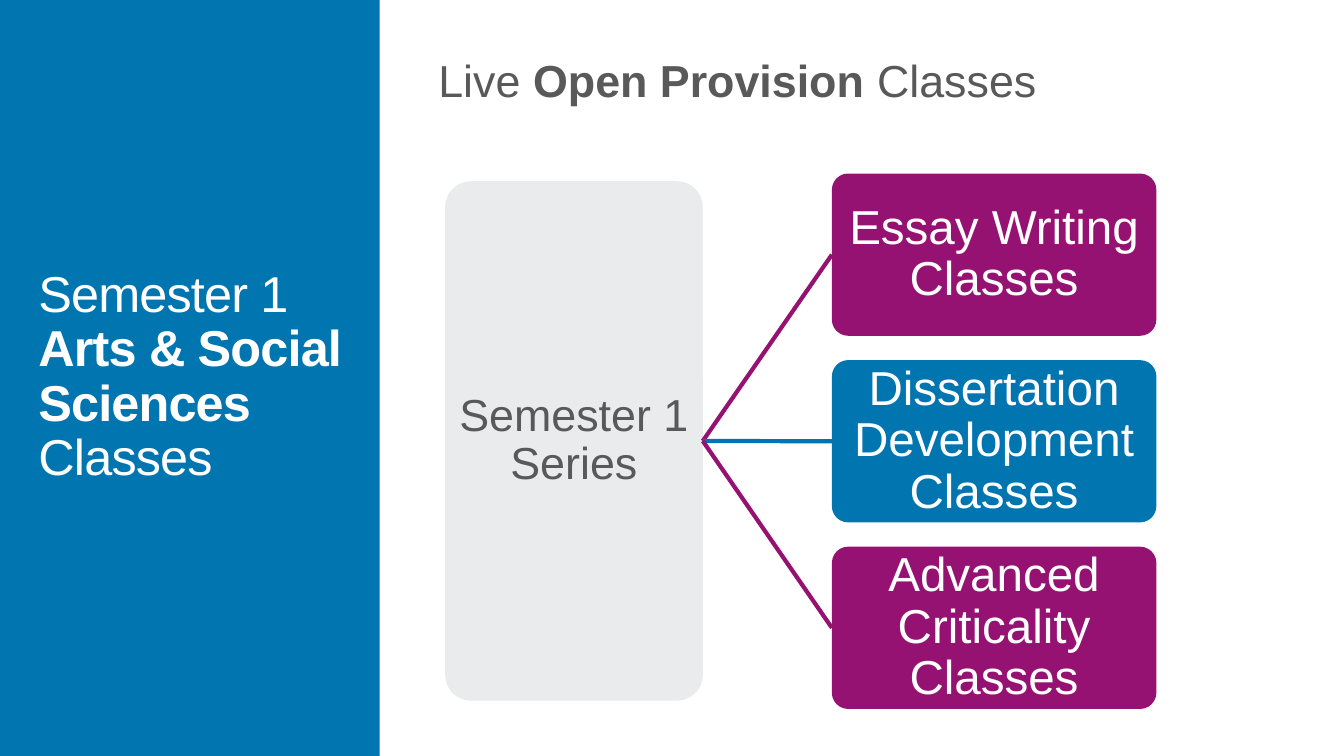
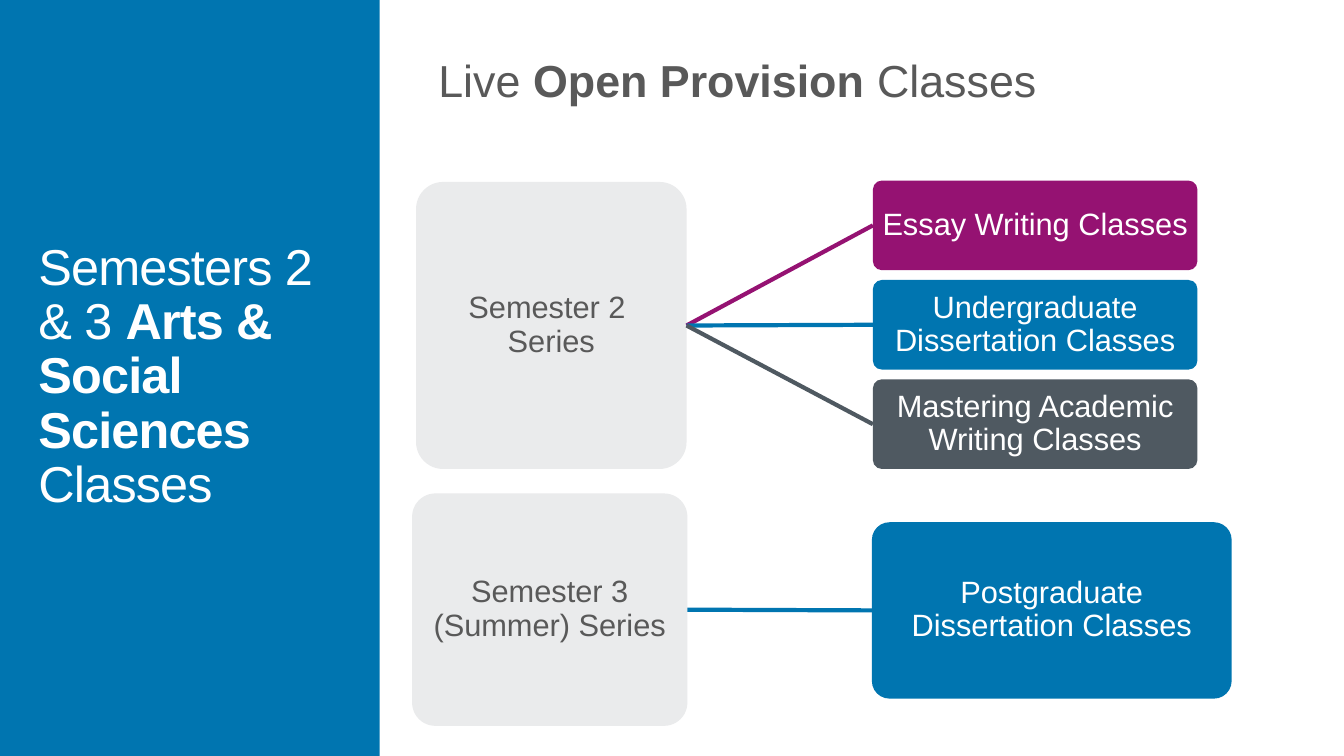
import pptx
import pptx.dml.color
import pptx.enum.shapes
import pptx.enum.text
import pptx.oxml.ns
import pptx.util
from lxml import etree

Pt = pptx.util.Pt
SHAPES = pptx.enum.shapes.MSO_SHAPE
ALIGN = pptx.enum.text.PP_ALIGN
ANCHOR = pptx.enum.text.MSO_ANCHOR

FONT = "Arial"
BLUE, PURPLE, SLATE = "0075B0", "951272", "4F5961"
PALE, GREY, WHITE = "EAEBEC", "595959", "FFFFFF"
SLIDE_WIDTH, SLIDE_HEIGHT = 960, 540
BAND_BOX = (0, 0, 271.2, SLIDE_HEIGHT)
TITLE_BOX = (20.2, 88.6, 231.8, 362.2)
HEADING_BOX = (306, 34, 622, 46)
HEADING = [("Live ", False), ("Open Provision ", True), ("Classes", False)]
SUBJECT = [("Arts & Social Sciences ", True), ("Classes", False)]


def points(box):
    """Turn a box of plain numbers into point lengths."""
    return [Pt(length) for length in box]


def paint(colour_format, colour):
    """Apply a hex colour to a fill, line or font colour."""
    colour_format.rgb = pptx.dml.color.RGBColor.from_string(colour)


def style_run(run, size, colour, bold=False):
    """Set the font of one run."""
    run.font.name, run.font.size, run.font.bold = FONT, Pt(size), bold
    paint(run.font.color, colour)


def write_parts(paragraph, parts, size, colour):
    """Write regular and bold parts, breaking the line where a part ends in one."""
    for words, bold in parts:
        run = paragraph.add_run()
        run.text = words.rstrip("\n")
        style_run(run, size, colour, bold)
        if words.endswith("\n"):
            paragraph.add_line_break()


def add_block(slide, preset, box, colour):
    """Add a flat shape with a plain fill."""
    block = slide.shapes.add_shape(preset, *points(box))
    block.shadow.inherit = False
    block.fill.solid()
    paint(block.fill.fore_color, colour)
    block.line.fill.background()
    return block


def add_card(slide, box, words, size, fill, ink):
    """Add a rounded card with centred text."""
    card = add_block(slide, SHAPES.ROUNDED_RECTANGLE, box, fill)
    card.adjustments[0] = 0.1
    frame = card.text_frame
    frame.word_wrap = True
    frame.vertical_anchor = ANCHOR.MIDDLE
    frame.margin_left = frame.margin_right = Pt(1.5)
    frame.margin_top = frame.margin_bottom = Pt(1.5)
    paragraph = frame.paragraphs[0]
    paragraph.text = words
    paragraph.alignment = ALIGN.CENTER
    paragraph.line_spacing = 0.9
    for run in paragraph.runs:
        style_run(run, size, ink)
    return card


def add_branch(slide, series, course, colour):
    """Join a series card to a course card."""
    branch = slide.shapes.add_connector(
        pptx.enum.shapes.MSO_CONNECTOR.STRAIGHT, 0, 0, 0, 0)
    branch.begin_connect(series, 3)
    branch.end_connect(course, 1)
    paint(branch.line.color, colour)
    branch.line.width = Pt(3)
    etree.SubElement(branch.element.spPr, pptx.oxml.ns.qn("a:effectLst"))


def add_series(slide, series_box, name, name_size, column, gap, courses, size):
    """Place a series card and share the column evenly among its courses."""
    series = add_card(slide, series_box, name, name_size, PALE, GREY)
    left, top, width, height = column
    course_height = (height - gap * (len(courses) - 1)) / len(courses)
    for index, (words, colour) in enumerate(courses):
        box = (left, top + index * (course_height + gap), width, course_height)
        course = add_card(slide, box, words, size, colour, WHITE)
        add_branch(slide, series, course, colour)


def prepare_layout(deck, layout):
    """Give the layout its side band and title area."""
    draft = deck.slides.add_slide(layout)
    band = add_block(draft, SHAPES.RECTANGLE, BAND_BOX, BLUE)
    layout.shapes.element.insert(2, band.element)
    return draft


def add_classes_slide(slide, title_parts):
    """Fill in the band title and the heading."""
    title = slide.shapes.title
    title.left, title.top, title.width, title.height = points(TITLE_BOX)
    title.text_frame.auto_size = pptx.enum.text.MSO_AUTO_SIZE.NONE
    title.text_frame.word_wrap = True
    title.text_frame.vertical_anchor = ANCHOR.MIDDLE
    paragraph = title.text_frame.paragraphs[0]
    paragraph.alignment = ALIGN.LEFT
    paragraph.line_spacing = 0.9
    write_parts(paragraph, title_parts + SUBJECT, 36, WHITE)
    for run in paragraph.runs:
        run.font.element.set("spc", "-60") if hasattr(run.font, "element") else \
            run._r.get_or_add_rPr().set("spc", "-60")
    heading = slide.shapes.add_textbox(*points(HEADING_BOX))
    heading.text_frame.word_wrap = True
    write_parts(heading.text_frame.paragraphs[0], HEADING, 32, GREY)


def main():
    """Build and save the two slides."""
    deck = pptx.Presentation()
    deck.slide_width, deck.slide_height = Pt(SLIDE_WIDTH), Pt(SLIDE_HEIGHT)
    layout = deck.slide_layouts[5]

    first = prepare_layout(deck, layout)
    add_classes_slide(first, [("Semester 1 \n", False)])
    add_series(first, (318, 129.5, 184, 371), "Semester 1 Series", 32,
               (594.2, 124, 231.8, 382.4), 17.4,
               [("Essay Writing Classes", PURPLE),
                ("Dissertation\nDevelopment Classes", BLUE),
                ("Advanced Criticality Classes", PURPLE)], 34)

    second = deck.slides.add_slide(layout)
    add_classes_slide(second, [("Semesters 2 & 3 ", False)])
    add_series(second, (297.2, 130, 193.2, 205), "Semester 2 \nSeries", 22,
               (623.5, 129, 231.8, 206), 7,
               [("Essay Writing Classes", PURPLE),
                ("Undergraduate Dissertation Classes", BLUE),
                ("Mastering Academic Writing Classes", SLATE)], 22)
    add_series(second, (294.4, 352.5, 196.6, 166), "Semester 3\n(Summer) Series", 22,
               (622.8, 373, 257, 126), 0,
               [("Postgraduate Dissertation Classes", BLUE)], 22)

    deck.save("out.pptx")


if __name__ == "__main__":
    main()
